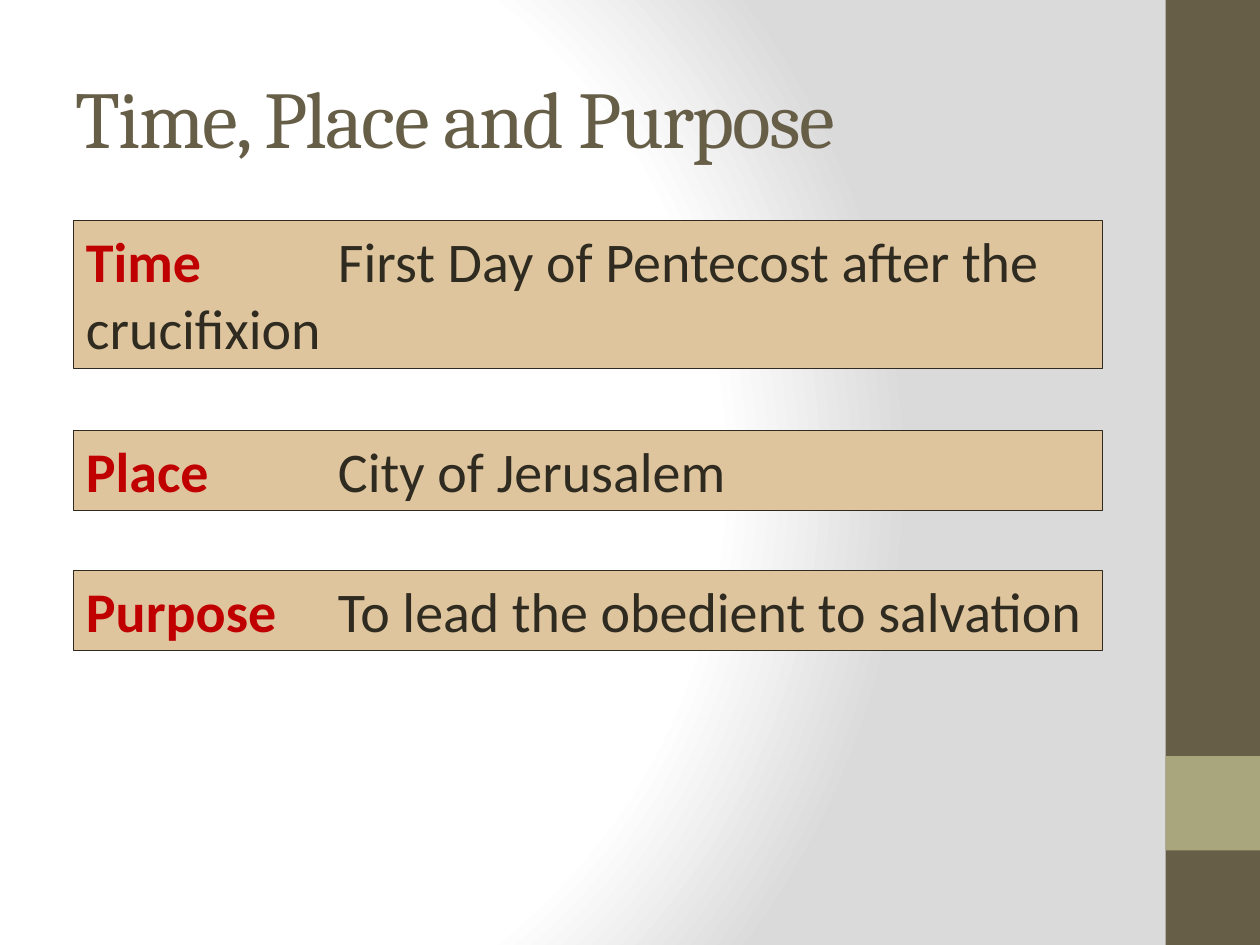
from lxml import etree
from pptx import Presentation
from pptx import util as u
from pptx.dml.color import RGBColor
from pptx.enum import shapes, text
from pptx.oxml import ns

Pt = u.Pt
WHITE = RGBColor(0xFF, 0xFF, 0xFF)
GREY = RGBColor(0xDA, 0xDA, 0xDA)
BROWN = RGBColor(0x67, 0x5E, 0x47)
OLIVE = RGBColor(0xA9, 0xA5, 0x7C)
TAN = RGBColor(0xDE, 0xC5, 0x9E)
INK = RGBColor(0x2F, 0x2B, 0x20)
RED = RGBColor(0xC0, 0x00, 0x00)


def write(par, words, font="Calibri", size=32, color=INK, bold=False, track=0):
    """Add a run; track is the letter spacing in points."""
    run = par.add_run()
    run.text = words
    run.font.name = font
    run.font.size = Pt(size)
    run.font.color.rgb = color
    run.font.bold = bold
    if track:
        run.font._element.set("spc", str(track * 100))


def tab(par, pos):
    """Set one left tab stop, in points from the text edge."""
    row = etree.SubElement(par._p.get_or_add_pPr(), ns.qn("a:tabLst"))
    etree.SubElement(row, ns.qn("a:tab"), pos=str(Pt(pos)), algn="l")


class Deck:
    def __init__(self, wide, high):
        self.prs = Presentation()
        self.prs.slide_width, self.prs.slide_height = Pt(wide), Pt(high)
        self.slide = self.prs.slides.add_slide(self.prs.slide_layouts[6])

    def glow(self, stops, focus):
        """Fill the background with a circular gradient around focus."""
        self.slide.background.fill.solid()
        back = self.slide.element.find(".//" + ns.qn("p:bgPr"))
        grad = etree.Element(ns.qn("a:gradFill"), rotWithShape="1")
        row = etree.SubElement(grad, ns.qn("a:gsLst"))
        for pos, color in stops:
            stop = etree.SubElement(row, ns.qn("a:gs"), pos=str(pos * 1000))
            etree.SubElement(stop, ns.qn("a:srgbClr"), val=str(color))
        ring = etree.SubElement(grad, ns.qn("a:path"), path="circle")
        sides = {k: str(v * 1000) for k, v in zip("ltrb", focus)}
        etree.SubElement(ring, ns.qn("a:fillToRect"), **sides)
        back.replace(back[0], grad)

    def rect(self, x, y, w, h, fill, line=None):
        box = self.slide.shapes.add_shape(
            shapes.MSO_SHAPE.RECTANGLE, Pt(x), Pt(y), Pt(w), Pt(h))
        box.shadow.inherit = False
        box.fill.solid()
        box.fill.fore_color.rgb = fill
        if line is None:
            box.line.fill.background()
        else:
            box.line.color.rgb = line
            box.line.width = Pt(0.75)
        return box

    def title(self, x, y, w, h, words):
        frame = self.slide.shapes.add_textbox(
            Pt(x), Pt(y), Pt(w), Pt(h)).text_frame
        frame.word_wrap = True
        frame.vertical_anchor = text.MSO_ANCHOR.MIDDLE
        write(frame.paragraphs[0], words, font="Cambria", size=46,
              color=BROWN, track=-1)

    def fact(self, y, h, label, words):
        """Add a tan box with a red label and its explanation."""
        frame = self.rect(42, y, 588, h, TAN, INK).text_frame
        frame.word_wrap = True
        frame.auto_size = text.MSO_AUTO_SIZE.SHAPE_TO_FIT_TEXT
        frame.vertical_anchor = text.MSO_ANCHOR.TOP
        par = frame.paragraphs[0]
        par.alignment = text.PP_ALIGN.LEFT
        tab(par, 144)
        write(par, label + "\t", color=RED, bold=True)
        write(par, words)


def main():
    deck = Deck(720, 540)
    deck.glow([(0, WHITE), (75, WHITE), (100, GREY)], (20, 50, 100, 50))
    deck.rect(666, 0, 54, 540, BROWN)
    deck.rect(666, 432, 54, 54, OLIVE)
    deck.title(36, 21.6, 600, 90, "Time, Place and Purpose")
    for y, h, label, words in [
        (126, 84.8, "Time", "First Day of Pentecost after the crucifixion"),
        (246, 45.8, "Place", "City of Jerusalem"),
        (326, 45.8, "Purpose", "To lead the obedient to salvation"),
    ]:
        deck.fact(y, h, label, words)
    deck.prs.save("out.pptx")


if __name__ == "__main__":
    main()
